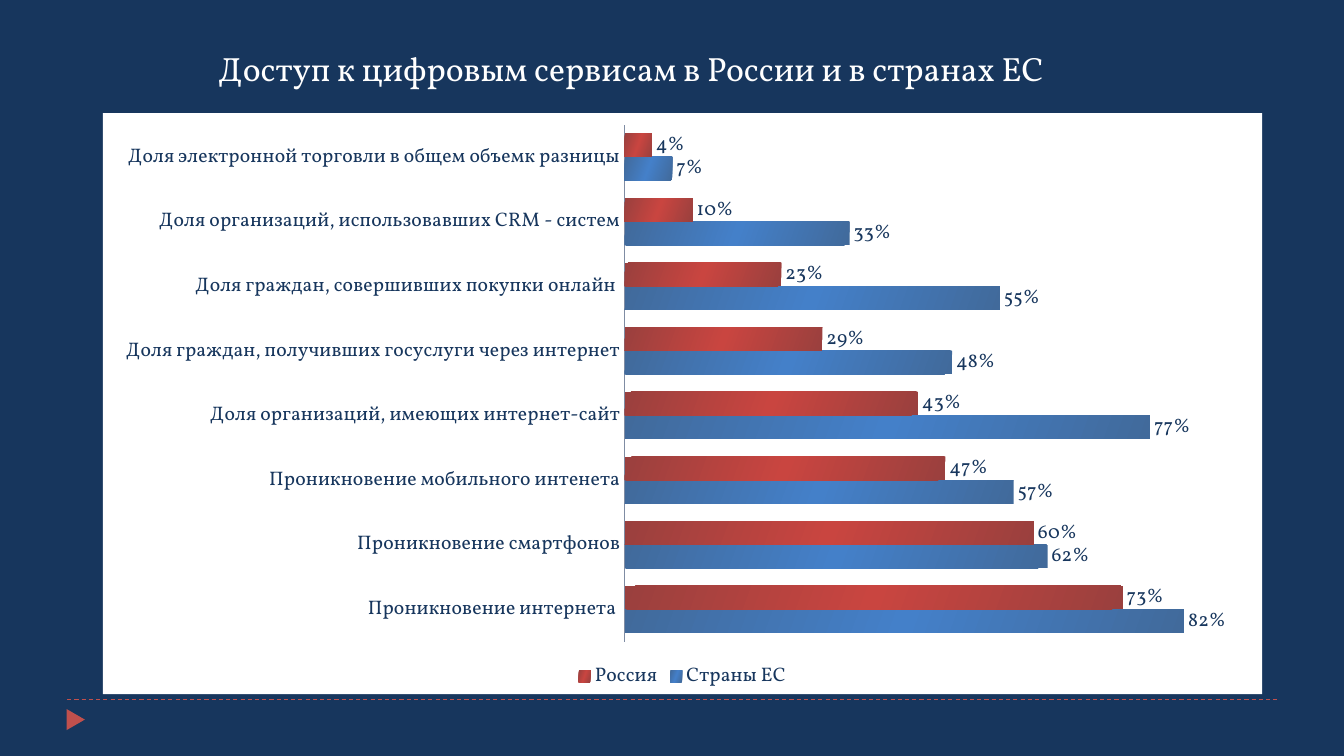
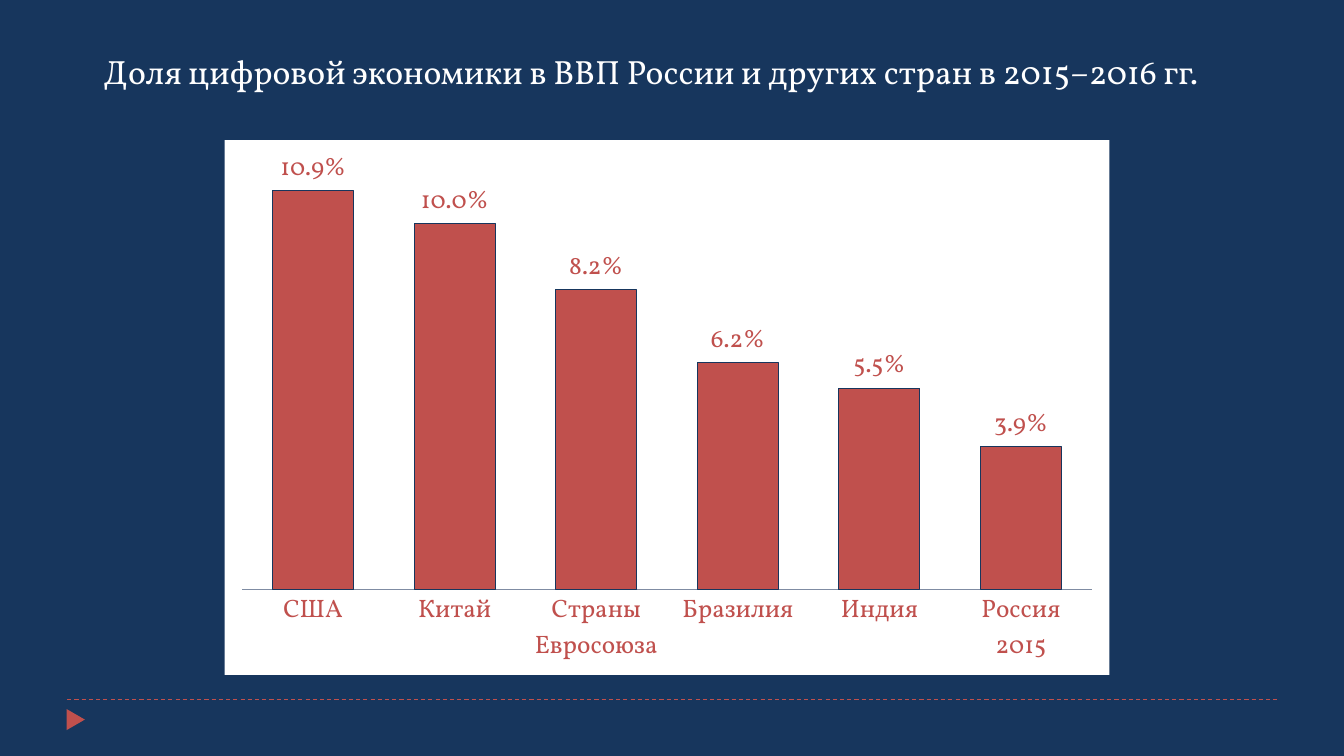
import pptx
import pptx.chart.data
import pptx.dml.color
import pptx.enum.chart
import pptx.enum.dml
import pptx.enum.shapes
import pptx.enum.text
import pptx.oxml
import pptx.oxml.ns
import pptx.util

Pt = pptx.util.Pt
qn = pptx.oxml.ns.qn
Chart = pptx.enum.chart

COLORS = {
    "navy": "17365D",
    "red": "C0504D",
    "white": "FFFFFF",
    "axis": "7F8CA3",
    "red_edge": "9A403E",
    "red_glow": "C94540",
    "blue_edge": "416A9B",
    "blue_glow": "4480C9",
}
FONT = "Vollkorn"
NAMESPACES = pptx.oxml.ns.nsdecls("a", "c")


def rgb(name):
    return pptx.dml.color.RGBColor.from_string(COLORS[name])


def style_font(font, size, color):
    font.name = FONT
    font.size = Pt(size)
    font.bold = False
    font.color.rgb = rgb(color)


def write_text(frame, text, size=24, color="white", align="LEFT", anchor="MIDDLE"):
    frame.word_wrap = False
    frame.auto_size = pptx.enum.text.MSO_AUTO_SIZE.SHAPE_TO_FIT_TEXT
    frame.vertical_anchor = getattr(pptx.enum.text.MSO_ANCHOR, anchor)
    paragraph = frame.paragraphs[0]
    paragraph.alignment = getattr(pptx.enum.text.PP_ALIGN, align)
    run = paragraph.add_run()
    run.text = text
    style_font(run.font, size, color)


def solid_bar(series, fill, outline):
    series.format.fill.solid()
    series.format.fill.fore_color.rgb = rgb(fill)
    series.format.line.color.rgb = rgb(outline)
    series.format.line.width = Pt(0.75)


def glowing_bar(series, hue):
    stops = "".join(
        f'<a:gs pos="{position}"><a:srgbClr val="{COLORS[hue + tone]}"/></a:gs>'
        for position, tone in ((0, "_edge"), (50000, "_glow"), (100000, "_edge"))
    )
    gradient = pptx.oxml.parse_xml(
        f'<a:gradFill {NAMESPACES} rotWithShape="1"><a:gsLst>{stops}</a:gsLst>'
        '<a:lin ang="1200000" scaled="0"/></a:gradFill>'
    )
    series.format.line.fill.background()
    series._element.find(qn("c:spPr")).insert(0, gradient)


class Deck:
    def __init__(self):
        self.presentation = pptx.Presentation()
        self.presentation.slide_width = Pt(960)
        self.presentation.slide_height = Pt(540)
        self.slide = None

    def new_slide(self):
        self.slide = self.presentation.slides.add_slide(self.presentation.slide_layouts[6])
        background = self.slide.background.fill
        background.solid()
        background.fore_color.rgb = rgb("navy")
        self.footer()

    def footer(self):
        rule = self.slide.shapes.add_connector(
            pptx.enum.shapes.MSO_CONNECTOR.STRAIGHT, Pt(48), Pt(500), Pt(912), Pt(500)
        )
        rule.line.color.rgb = rgb("red")
        rule.line.width = Pt(0.75)
        rule.line.dash_style = pptx.enum.dml.MSO_LINE.DASH
        rule._element.spPr.append(pptx.oxml.parse_xml(f"<a:effectLst {NAMESPACES}/>"))
        marker = self.slide.shapes.add_shape(
            pptx.enum.shapes.MSO_SHAPE.ISOSCELES_TRIANGLE, Pt(46.6), Pt(507.5), Pt(15), Pt(13)
        )
        marker.rotation = 90
        marker.shadow.inherit = False
        marker.fill.solid()
        marker.fill.fore_color.rgb = rgb("red")
        marker.line.fill.background()

    def title(self, text, left, top, width):
        box = self.slide.shapes.add_textbox(Pt(left), Pt(top), Pt(width), Pt(36))
        write_text(box.text_frame, text)

    def bar_chart(self, kind, box, categories, series, plot_box, top_value,
                  size, color, number_format):
        data = pptx.chart.data.CategoryChartData(number_format=number_format)
        data.categories = categories
        for name, values in series:
            data.add_series(name, values)
        chart = self.slide.shapes.add_chart(kind, *map(Pt, box), data).chart
        chart.has_title = False
        chart.has_legend = False
        style_font(chart.font, size, color)
        chart._chartSpace.find(qn("c:chart")).addnext(pptx.oxml.parse_xml(
            f'<c:spPr {NAMESPACES}><a:solidFill><a:srgbClr val="{COLORS["white"]}"/>'
            "</a:solidFill><a:ln><a:noFill/></a:ln></c:spPr>"
        ))
        self.place_plot(chart, plot_box)

        names = chart.category_axis
        names.major_tick_mark = Chart.XL_TICK_MARK.NONE
        names.minor_tick_mark = Chart.XL_TICK_MARK.NONE
        names.has_major_gridlines = False
        names.format.line.color.rgb = rgb("axis")
        names.format.line.width = Pt(0.75)
        scale = chart.value_axis
        scale.minimum_scale = 0
        scale.maximum_scale = top_value
        scale.has_major_gridlines = False
        scale.visible = False

        plot = chart.plots[0]
        plot.gap_width = 75
        plot.overlap = 0
        plot.vary_by_categories = False
        for bars in plot.series:
            labels = bars.data_labels
            labels.show_value = True
            labels.position = Chart.XL_LABEL_POSITION.OUTSIDE_END
            labels.number_format = number_format
            labels.number_format_is_linked = False
            style_font(labels.font, size, color)
        return chart

    def place_plot(self, chart, plot_box):
        area = chart._chartSpace.find(qn("c:chart")).find(qn("c:plotArea"))
        for layout in area.findall(qn("c:layout")):
            area.remove(layout)
        sides = "".join(f'<c:{side} val="{value}"/>' for side, value in zip("xywh", plot_box))
        area.insert(0, pptx.oxml.parse_xml(
            f'<c:layout {NAMESPACES}><c:manualLayout><c:layoutTarget val="inner"/>'
            f'<c:xMode val="edge"/><c:yMode val="edge"/>{sides}</c:manualLayout></c:layout>'
        ))

    def legend(self, chart, size, color):
        chart.has_legend = True
        chart.legend.position = Chart.XL_LEGEND_POSITION.BOTTOM
        chart.legend.include_in_layout = False
        style_font(chart.legend.font, size, color)


def digital_services(deck):
    deck.new_slide()
    access = deck.bar_chart(
        Chart.XL_CHART_TYPE.BAR_CLUSTERED,
        (73.5, 80.75, 828, 415),
        [
            "Проникновение интернета ",
            "Проникновение смартфонов",
            "Проникновение мобильного интенета",
            "Доля организаций, имеющих интернет-сайт",
            "Доля граждан, получивших госуслуги через интернет",
            "Доля граждан, совершивших покупки онлайн ",
            "Доля организаций, использовавших CRM - систем",
            "Доля электронной торговли в общем объемк разницы",
        ],
        [
            ("Страны ЕС", (0.82, 0.62, 0.57, 0.77, 0.48, 0.55, 0.33, 0.07)),
            ("Россия", (0.73, 0.6, 0.47, 0.43, 0.29, 0.23, 0.1, 0.04)),
        ],
        plot_box=(0.45, 0.02, 0.53, 0.89),
        top_value=0.9, size=14, color="navy", number_format="0%",
    )
    for bars, hue in zip(access.plots[0].series, ("blue", "red")):
        glowing_bar(bars, hue)
    deck.legend(access, size=14, color="navy")
    deck.title("Доступ к цифровым сервисам в России и в странах ЕС", 149, 30.5, 632)


def digital_economy(deck):
    deck.new_slide()
    share = deck.bar_chart(
        Chart.XL_CHART_TYPE.COLUMN_CLUSTERED,
        (160.5, 100, 632, 382),
        ["США", "Китай", "Страны Евросоюза", "Бразилия", "Индия", "Россия 2015"],
        [("Series 1", (0.109, 0.1, 0.082, 0.062, 0.055, 0.039))],
        plot_box=(0.02, 0.02, 0.96, 0.82),
        top_value=0.12, size=18, color="red", number_format="0.0%",
    )
    solid_bar(share.plots[0].series[0], "red", "navy")
    deck.title("Доля цифровой экономики в ВВП России и других стран в 2015–2016 гг.", 67, 33, 833)


def main():
    deck = Deck()
    digital_services(deck)
    digital_economy(deck)
    deck.presentation.save("out.pptx")


if __name__ == "__main__":
    main()
